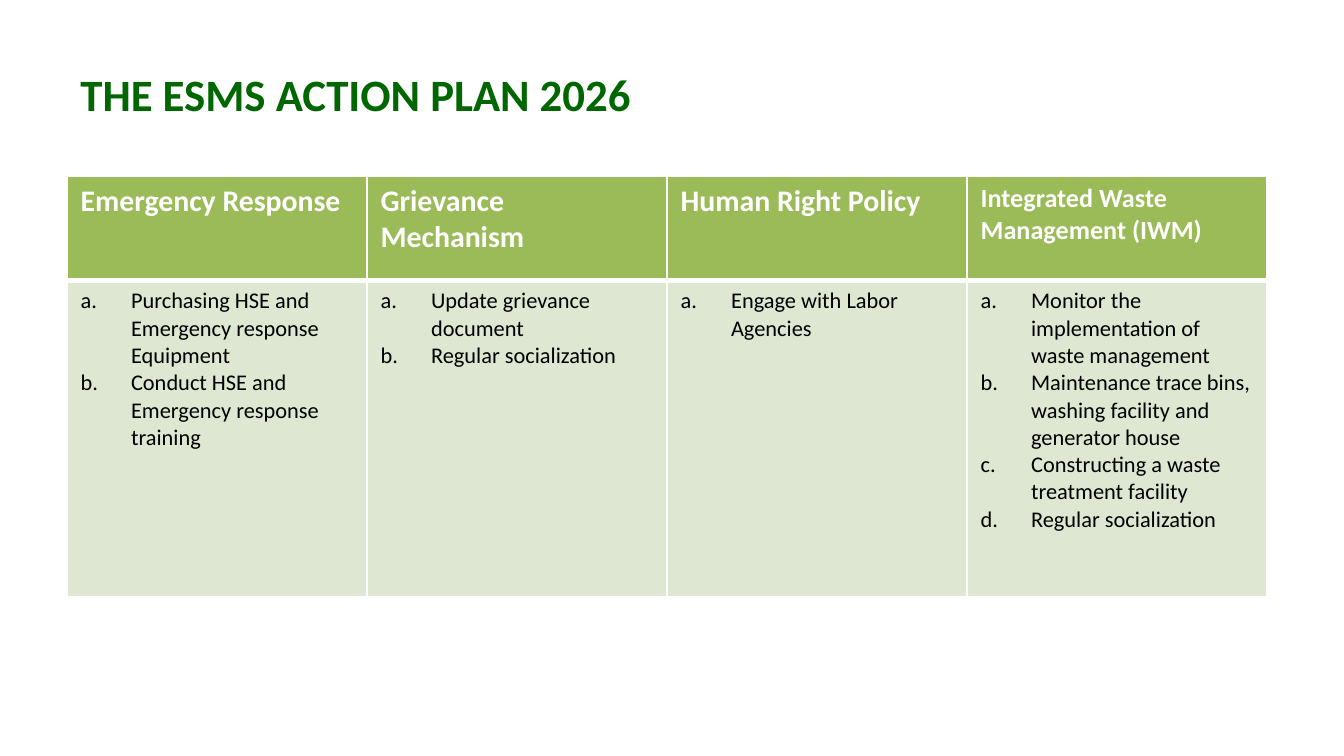
from lxml.etree import SubElement
from pptx import Presentation
from pptx.dml.color import RGBColor
from pptx.enum.text import MSO_ANCHOR
from pptx.oxml import parse_xml
from pptx.oxml.ns import nsdecls, qn
from pptx.util import Inches, Pt

TITLE = "THE ESMS ACTION PLAN 2026"
PLAN = [
    ("Emergency Response", 16, [
        "Purchasing HSE and Emergency response Equipment",
        "Conduct HSE and Emergency response training",
    ]),
    ("Grievance Mechanism", 16, [
        "Update grievance document",
        "Regular socialization",
    ]),
    ("Human Right Policy", 16, ["Engage with Labor Agencies"]),
    ("Integrated Waste Management (IWM)", 14, [
        "Monitor the implementation of waste management",
        "Maintenance trace bins, washing facility and generator house",
        "Constructing a waste treatment facility",
        "Regular socialization",
    ]),
]

DARK = RGBColor(0x00, 0x66, 0x00)
GREEN = RGBColor(0x9B, 0xBB, 0x59)
PALE = RGBColor(0xDE, 0xE7, 0xD1)
WHITE = RGBColor(0xFF, 0xFF, 0xFF)
BLACK = RGBColor(0x00, 0x00, 0x00)
FONT = "Calibri"
PAGE = 10
WIDTH = 8.93
ROWS = (0.78, 2.35)
INDENT = Inches(3 / 8)


def write(frame, lines, size=12, color=BLACK, bold=False, listed=False):
    for i, line in enumerate(lines):
        para = frame.add_paragraph() if i else frame.paragraphs[0]
        if listed:
            props = para._p.get_or_add_pPr()
            props.set("marL", str(INDENT))
            props.set("indent", str(-INDENT))
            SubElement(props, qn("a:buAutoNum"), type="alphaLcPeriod")
        run = para.add_run()
        run.text = line
        font = run.font
        font.name, font.size, font.bold = FONT, Pt(size), bold
        font.color.rgb = color


def style(cell, fill, top=1, bottom=1):
    cell.fill.solid()
    cell.fill.fore_color.rgb = fill
    props = cell._tc.get_or_add_tcPr()
    edges = {"lnL": 1, "lnR": 1, "lnT": top, "lnB": bottom}
    for i, (tag, width) in enumerate(edges.items()):
        props.insert(i, parse_xml(
            f'<a:{tag} {nsdecls("a")} w="{Pt(width)}"><a:solidFill>'
            f'<a:srgbClr val="{WHITE}"/></a:solidFill></a:{tag}>'))


def main():
    deck = Presentation()
    deck.slide_width, deck.slide_height = Inches(PAGE), Inches(PAGE * 9 / 16)
    slide = deck.slides.add_slide(deck.slide_layouts[6])

    title = slide.shapes.add_textbox(
        Inches(0.5), Inches(0.23), Inches(4.5), Inches(0.94)).text_frame
    title.word_wrap = True
    title.vertical_anchor = MSO_ANCHOR.MIDDLE
    write(title, [TITLE], size=24, color=DARK, bold=True)

    table = slide.shapes.add_table(
        len(ROWS), len(PLAN), Inches(0.5), Inches(1.31),
        Inches(WIDTH), Inches(sum(ROWS))).table
    for row, height in zip(table.rows, ROWS):
        row.height = Inches(height)
    for col, (head, size, tasks) in enumerate(PLAN):
        table.columns[col].width = Inches(WIDTH / len(PLAN))
        top, body = table.cell(0, col), table.cell(1, col)
        style(top, GREEN, bottom=3)
        write(top.text_frame, [head], size=size, color=WHITE, bold=True)
        style(body, PALE, top=3)
        write(body.text_frame, tasks, listed=True)

    deck.save("out.pptx")


if __name__ == "__main__":
    main()
